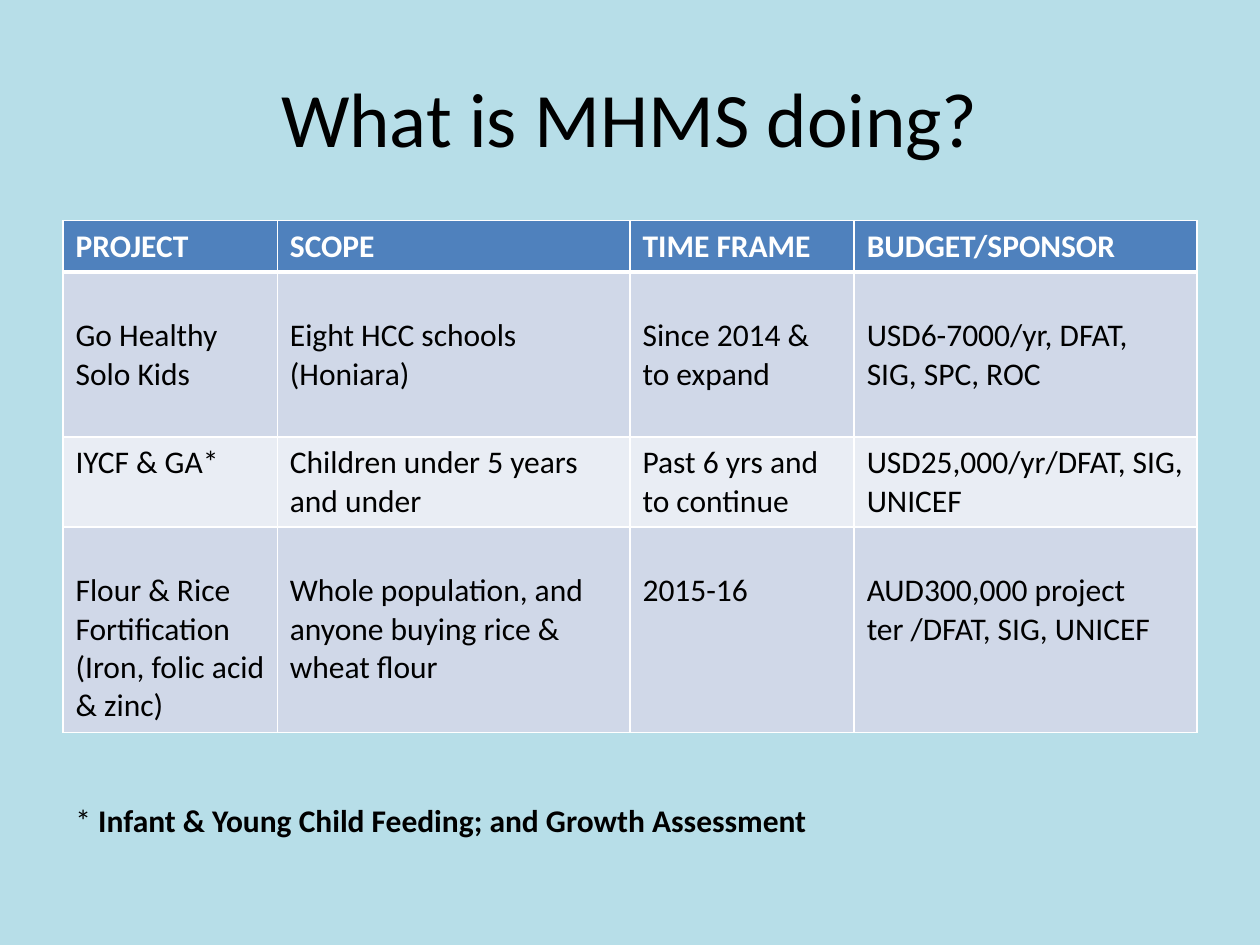
from dataclasses import dataclass

import pptx
import pptx.dml.color
import pptx.enum.text
import pptx.oxml
import pptx.oxml.ns
import pptx.util
from pptx.util import Cm

COLORS = {
    "background": "B7DEE8",
    "header": "4F81BD",
    "band_dark": "D0D8E8",
    "band_light": "E9EDF4",
    "white": "FFFFFF",
    "black": "000000",
}
FONT = "Calibri"
LEFT, WIDTH = Cm(1.27), Cm(22.86)
COLUMN_WIDTHS = (4.32, 7.11, 4.52, 6.91)
THIN, THICK = 1, 3


@dataclass
class Row:
    texts: tuple[str, ...]
    height: float
    fill: str
    header: bool = False
    margin_top: float = 0.13


ROWS = (
    Row(("PROJECT", "SCOPE", "TIME FRAME", "BUDGET/SPONSOR"),
        1.03, "header", header=True),
    Row(("Go Healthy Solo Kids", "Eight HCC schools (Honiara)",
         "Since 2014 & to expand", "USD6-7000/yr, DFAT, SIG, SPC, ROC"),
        3.33, "band_dark", margin_top=0.9),
    Row(("IYCF & GA*", "Children under 5 years and under",
         "Past 6 yrs and to continue", "USD25,000/yr/DFAT, SIG, UNICEF"),
        1.81, "band_light"),
    Row(("Flour & Rice Fortification (Iron, folic acid & zinc)",
         "Whole population, and anyone buying rice & wheat flour",
         "2015-16", "AUD300,000 project ter /DFAT, SIG, UNICEF"),
        4.14, "band_dark", margin_top=0.9),
)


def rgb(name: str) -> pptx.dml.color.RGBColor:
    return pptx.dml.color.RGBColor.from_string(COLORS[name])


def add_run(p, text: str, size: int = 18, color: str = "black", bold: bool = False) -> None:
    r = p.add_run()
    r.text = text
    r.font.name = FONT
    r.font.size = pptx.util.Pt(size)
    r.font.bold = bold
    r.font.color.rgb = rgb(color)


def set_borders(cell, top: int, bottom: int) -> None:
    """Put white lines before the fill, as the schema orders them."""
    tc_pr = cell._tc.get_or_add_tcPr()
    sides = {"L": THIN, "R": THIN, "T": top, "B": bottom}
    for i, (side, points) in enumerate(sides.items()):
        tc_pr.insert(i, pptx.oxml.parse_xml(
            f'<a:ln{side} {pptx.oxml.ns.nsdecls("a")} w="{pptx.util.Pt(points)}">'
            f'<a:solidFill><a:srgbClr val="{COLORS["white"]}"/></a:solidFill>'
            f'</a:ln{side}>'))


def add_title(s, text: str) -> None:
    sp = s.shapes.title
    sp.left, sp.top, sp.width, sp.height = LEFT, Cm(0.76), WIDTH, Cm(3.18)
    tf = sp.text_frame
    tf.vertical_anchor = pptx.enum.text.MSO_ANCHOR.MIDDLE
    p = tf.paragraphs[0]
    p.alignment = pptx.enum.text.PP_ALIGN.CENTER
    add_run(p, text, size=44)


def add_project_table(s, rows: tuple[Row, ...]) -> None:
    height = Cm(sum(row.height for row in rows))
    table = s.shapes.add_table(
        len(rows), len(COLUMN_WIDTHS), LEFT, Cm(4.45), WIDTH, height).table
    for column, width in zip(table.columns, COLUMN_WIDTHS):
        column.width = Cm(width)
    for i, row in enumerate(rows):
        table.rows[i].height = Cm(row.height)
        below_header = i > 0 and rows[i - 1].header
        for cell, text in zip(table.rows[i].cells, row.texts):
            cell.margin_top = Cm(row.margin_top)
            cell.fill.solid()
            cell.fill.fore_color.rgb = rgb(row.fill)
            set_borders(cell, THICK if below_header else THIN,
                        THICK if row.header else THIN)
            add_run(cell.text_frame.paragraphs[0], text,
                    color="white" if row.header else "black", bold=row.header)


def add_footnote(s, mark: str, text: str) -> None:
    tf = s.shapes.add_textbox(LEFT, Cm(16.03), Cm(15.49), Cm(1.02)).text_frame
    tf.word_wrap = False
    tf.auto_size = pptx.enum.text.MSO_AUTO_SIZE.SHAPE_TO_FIT_TEXT
    p = tf.paragraphs[0]
    add_run(p, mark)
    add_run(p, text, bold=True)


def main() -> None:
    prs = pptx.Presentation()
    prs.slide_width, prs.slide_height = Cm(25.4), Cm(19.05)
    s = prs.slides.add_slide(prs.slide_layouts.get_by_name("Title Only"))
    s.background.fill.solid()
    s.background.fill.fore_color.rgb = rgb("background")
    add_title(s, "What is MHMS doing?")
    add_project_table(s, ROWS)
    add_footnote(s, "* ", "Infant & Young Child Feeding; and Growth Assessment")
    prs.save("out.pptx")


if __name__ == "__main__":
    main()
